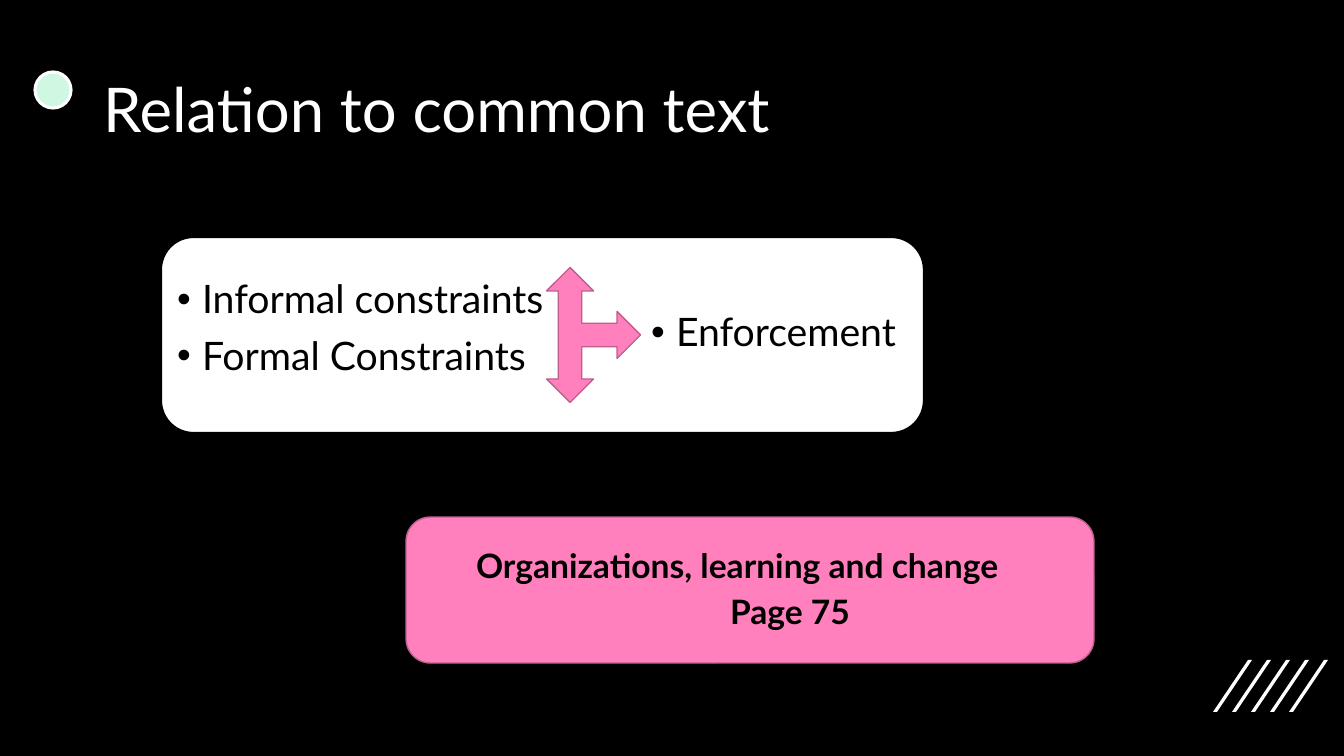
from lxml.etree import SubElement as Sub
from pptx import Presentation as Deck
from pptx.dml.color import RGBColor as Rgb
from pptx.enum.shapes import MSO_SHAPE as Kind
from pptx.enum.text import MSO_ANCHOR as Anchor, MSO_AUTO_SIZE as Fit, PP_ALIGN as Align
from pptx.oxml.ns import qn
from pptx.util import Emu, Pt

BLACK = Rgb(0x00, 0x00, 0x00)
WHITE = Rgb(0xFF, 0xFF, 0xFF)
PINK = Rgb(0xFF, 0x80, 0xBD)
ROSE = Rgb(0xBD, 0x5F, 0x8C)
MINT = Rgb(0xCF, 0xF7, 0xE1)
FONT = "Lato"
WIDE, HIGH = 1344, 756
SCALE = 12192000 / WIDE


def px(size):
    return Emu(round(size * SCALE))


def write(para, text, size=28, color=BLACK, bold=False, space=0.9, before=10,
          indent=0, bullet=False):
    run = para.add_run()
    run.text = text
    run.font.name = FONT
    run.font.size = Pt(size)
    run.font.bold = bold
    run.font.color.rgb = color
    para.alignment = Align.LEFT
    para.line_spacing = space
    para.space_before = Pt(before)
    props = para._p.get_or_add_pPr()
    hang = 25 if bullet else 0
    props.set("marL", str(px(indent + hang)))
    props.set("indent", str(px(-hang)))
    if bullet:
        Sub(props, qn("a:buFont"), typeface="Arial")
        Sub(props, qn("a:buChar"), char="•")
    else:
        Sub(props, qn("a:buNone"))


class Page:
    def __init__(self, deck):
        self.slide = deck.slides.add_slide(deck.slide_layouts[4])
        self.shapes = self.slide.shapes
        self.slide.background.fill.solid()
        self.slide.background.fill.fore_color.rgb = BLACK

    def paint(self, shape, fill, line=None, width=1):
        shape.shadow.inherit = False
        shape.fill.solid()
        shape.fill.fore_color.rgb = fill
        if line is None:
            shape.line.fill.background()
        else:
            shape.line.color.rgb = line
            shape.line.width = Pt(width)

    def shape(self, kind, box, fill, line, width=1, turn=0):
        shape = self.shapes.add_shape(kind, *map(px, box))
        shape.rotation = turn
        self.paint(shape, fill, line, width)

    def stripe(self, left, top):
        path = self.shapes.build_freeform(left + 4, top + 52, scale=SCALE)
        path.add_line_segments([(left, top + 52), (left + 35, top), (left + 39, top)])
        self.paint(path.convert_to_shape(), WHITE)

    def fill(self, slot, box, lines, anchor=Anchor.TOP, **style):
        holder = self.slide.placeholders[slot]
        holder.left, holder.top, holder.width, holder.height = map(px, box)
        self.shapes.element.append(holder.element)
        frame = holder.text_frame
        frame.auto_size = Fit.NONE
        frame.word_wrap = True
        frame.vertical_anchor = anchor
        for spot, (text, indent) in enumerate(lines):
            para = frame.add_paragraph() if spot else frame.paragraphs[0]
            write(para, text, indent=indent, **style)

    def drop(self, slot):
        self.shapes.element.remove(self.slide.placeholders[slot].element)


def main():
    deck = Deck()
    deck.slide_width, deck.slide_height = px(WIDE), px(HIGH)
    page = Page(deck)
    page.drop(3)
    for step in range(5):
        page.stripe(1213 + 19 * step, 660)
    page.shape(Kind.OVAL, (35, 72, 36, 36), MINT, WHITE, 2.25)
    page.shape(Kind.ROUNDED_RECTANGLE, (406, 517, 688, 146), PINK, ROSE)
    page.shape(Kind.ROUNDED_RECTANGLE, (161, 237, 763, 196), WHITE, BLACK, 1.5)
    page.fill(0, (93, 40, 1159, 146), [("Relation to common text", 0)],
              Anchor.MIDDLE, size=44, color=WHITE, before=0)
    page.fill(1, (466, 545, 569, 91),
              [("Organizations, learning and change", 0), ("Page 75", 254)],
              Anchor.BOTTOM, size=24, bold=True, space=0.8)
    page.fill(2, (167, 275, 569, 406),
              [("Informal constraints", 0), ("Formal Constraints", 0)], bullet=True)
    page.fill(4, (641, 308, 267, 69), [("Enforcement", 0)], bullet=True)
    page.shape(Kind.LEFT_RIGHT_UP_ARROW, (526, 288, 135, 94), PINK, ROSE, turn=90)
    deck.save("out.pptx")


if __name__ == "__main__":
    main()
